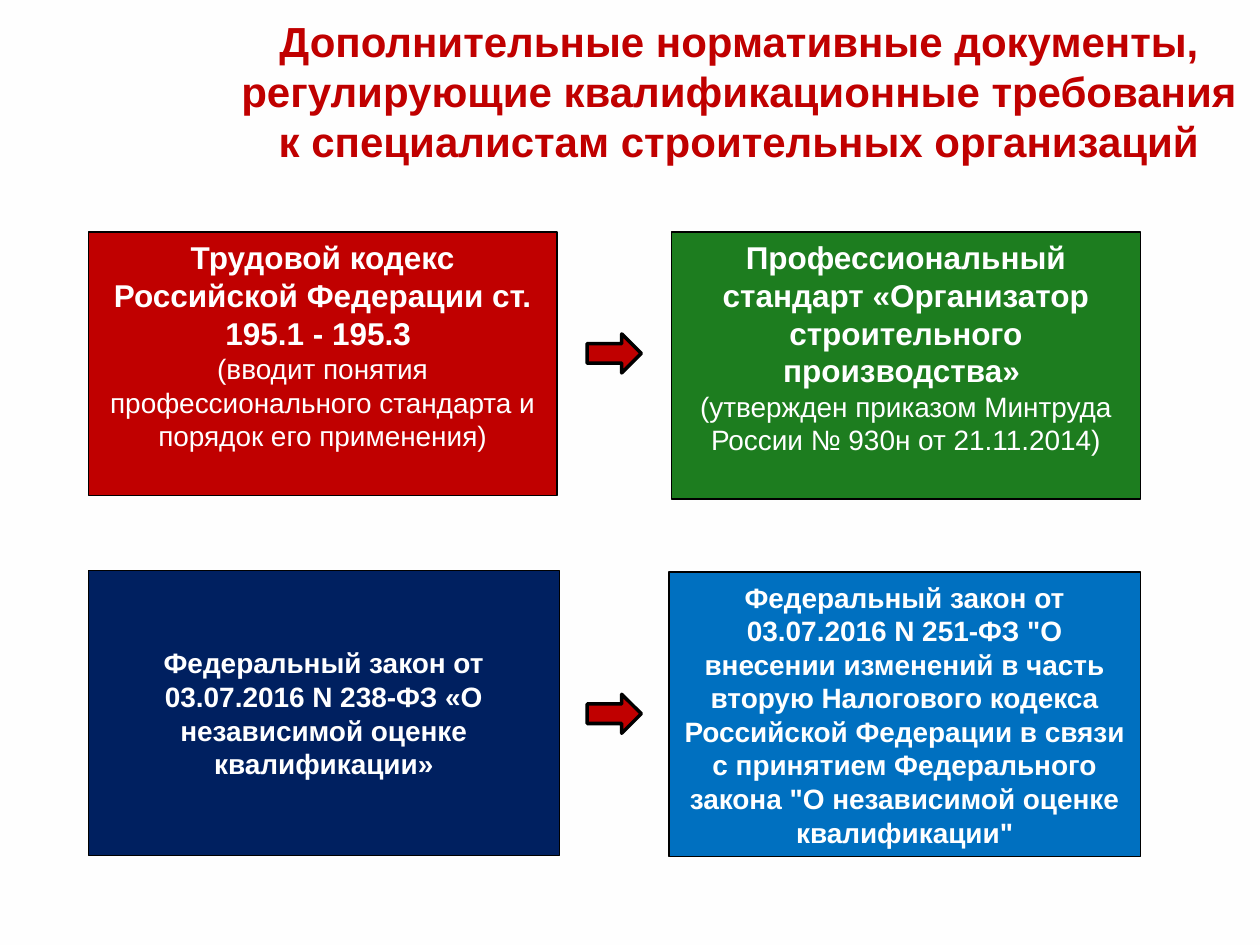
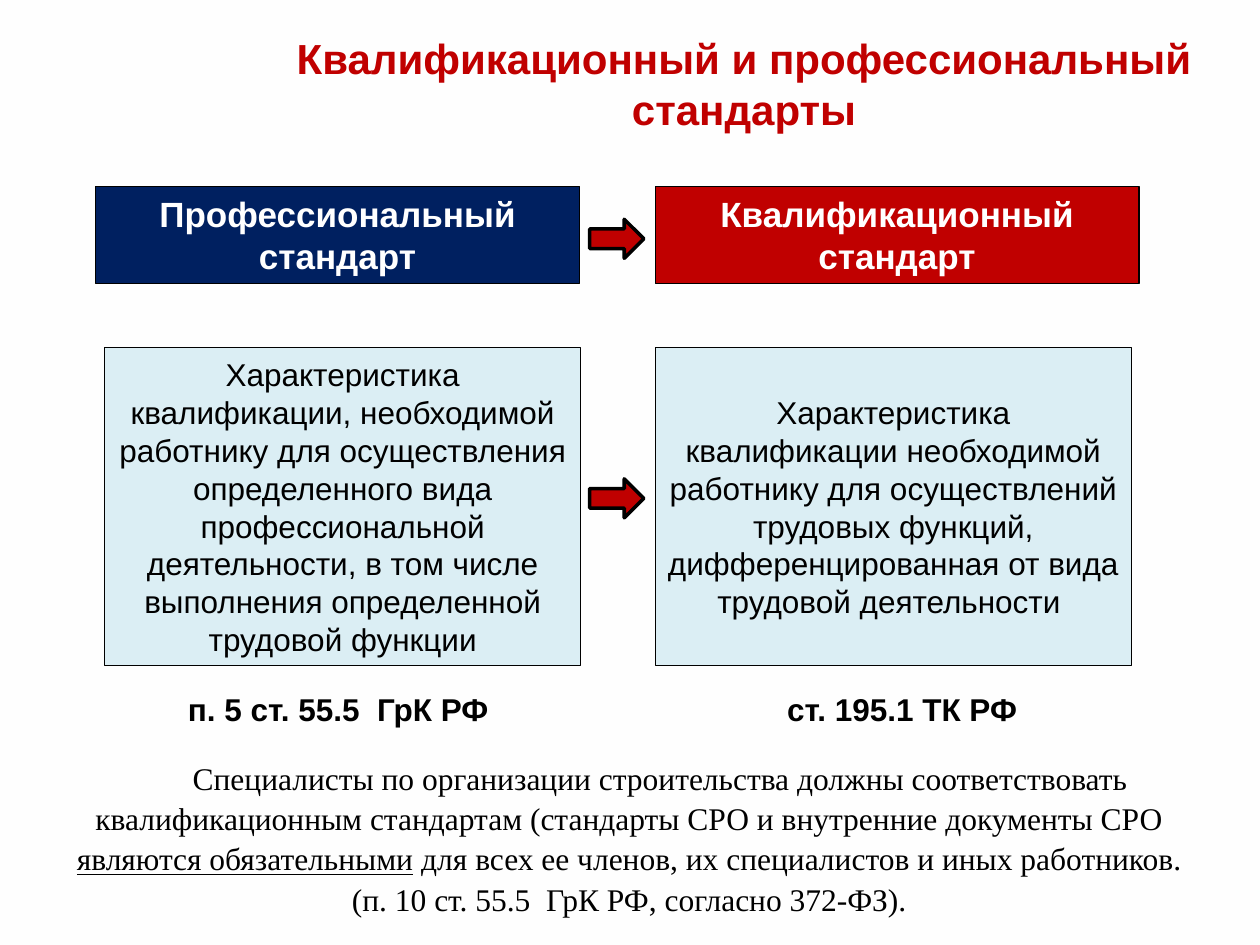
from dataclasses import dataclass

import pptx
import pptx.dml.color
import pptx.enum.shapes
import pptx.enum.text
import pptx.oxml.ns
import pptx.presentation
import pptx.shapes.autoshape
import pptx.slide
import pptx.text.text
import pptx.util

Inches = pptx.util.Inches
Anchor = pptx.enum.text.MSO_ANCHOR
Geometry = pptx.enum.shapes.MSO_SHAPE

COLORS = {
    "background": "FEFEFE",
    "red": "C00000",
    "navy": "002060",
    "green": "1D7D1F",
    "blue": "0070C0",
    "pale": "DBEEF4",
    "white": "FFFFFF",
    "black": "000000",
}
SANS = "Arial"
SERIF = "Times New Roman"
TITLE_WIDTH = 8.27
ARROW_WIDTH, ARROW_HEIGHT = 0.43, 0.31


@dataclass
class Line:
    text: str
    size: int
    bold: bool = True


@dataclass
class Panel:
    left: float
    top: float
    width: float
    height: float
    fill: str
    lines: list[Line]
    text_color: str = "white"
    anchor: Anchor = Anchor.MIDDLE


@dataclass
class Caption:
    left: float
    width: float
    text: str


def rgb(name: str) -> pptx.dml.color.RGBColor:
    return pptx.dml.color.RGBColor.from_string(COLORS[name])


def format_paragraph(paragraph: pptx.text.text._Paragraph, size: int, color: str,
                     bold: bool = True, font_name: str = SANS) -> None:
    paragraph.alignment = pptx.enum.text.PP_ALIGN.CENTER
    font = paragraph.font
    font.name = font_name
    font.size = pptx.util.Pt(size)
    font.bold = bold
    font.color.rgb = rgb(color)


def add_titled_slide(presentation: pptx.presentation.Presentation, text: str,
                     left: float, top: float, height: float) -> pptx.slide.Slide:
    slide = presentation.slides.add_slide(presentation.slide_layouts[5])
    slide.background.fill.solid()
    slide.background.fill.fore_color.rgb = rgb("background")
    title = slide.shapes.title
    title.left, title.top = Inches(left), Inches(top)
    title.width, title.height = Inches(TITLE_WIDTH), Inches(height)
    frame = title.text_frame
    frame.text = text
    frame.auto_size = pptx.enum.text.MSO_AUTO_SIZE.NONE
    frame.vertical_anchor = Anchor.TOP
    format_paragraph(frame.paragraphs[0], 24, "red")
    return slide


def add_block(slide: pptx.slide.Slide, geometry: Geometry, left: float, top: float,
              width: float, height: float, fill: str,
              line_width: float) -> pptx.shapes.autoshape.Shape:
    shape = slide.shapes.add_shape(
        geometry, Inches(left), Inches(top), Inches(width), Inches(height))
    shape.shadow.inherit = False
    shape.fill.solid()
    shape.fill.fore_color.rgb = rgb(fill)
    shape.line.color.rgb = rgb("black")
    shape.line.width = pptx.util.Pt(line_width)
    return shape


def add_panel(slide: pptx.slide.Slide, panel: Panel) -> None:
    shape = add_block(slide, Geometry.RECTANGLE, panel.left, panel.top,
                      panel.width, panel.height, panel.fill, 0.75)
    frame = shape.text_frame
    frame.word_wrap = True
    frame.vertical_anchor = panel.anchor
    for index, line in enumerate(panel.lines):
        paragraph = frame.add_paragraph() if index else frame.paragraphs[0]
        paragraph.text = line.text
        format_paragraph(paragraph, line.size, panel.text_color, line.bold)


def add_arrow(slide: pptx.slide.Slide, left: float, top: float) -> None:
    add_block(slide, Geometry.RIGHT_ARROW, left, top, ARROW_WIDTH, ARROW_HEIGHT, "red", 2)


def add_text_box(slide: pptx.slide.Slide, left: float, top: float, width: float,
                 height: float) -> pptx.text.text._Paragraph:
    box = slide.shapes.add_textbox(Inches(left), Inches(top), Inches(width), Inches(height))
    box.text_frame.word_wrap = True
    paragraph = box.text_frame.paragraphs[0]
    paragraph.line_spacing = 1.07
    return paragraph


def build_documents_slide(presentation: pptx.presentation.Presentation) -> None:
    slide = add_titled_slide(
        presentation,
        "Дополнительные нормативные документы, регулирующие квалификационные "
        "требования к специалистам строительных организаций", 1.73, 0.07, 1.31)
    panels = [
        Panel(0.7, 1.84, 3.72, 2.09, "red", [
            Line("Трудовой кодекс Российской Федерации ст. 195.1 - 195.3 ", 18),
            Line("(вводит понятия профессионального стандарта и порядок "
                 "его применения)", 16, False),
        ], anchor=Anchor.TOP),
        Panel(5.33, 1.84, 3.72, 2.12, "green", [
            Line("Профессиональный стандарт «Организатор строительного производства» ", 18),
            Line("(утвержден приказом Минтруда России № 930н от 21.11.2014)", 16, False),
        ], anchor=Anchor.TOP),
        Panel(0.7, 4.53, 3.74, 2.26, "navy", [
            Line("Федеральный закон от 03.07.2016 N 238-ФЗ «О независимой "
                 "оценке квалификации»", 16),
        ]),
        Panel(5.31, 4.54, 3.74, 2.26, "blue", [
            Line('Федеральный закон от 03.07.2016 N 251-ФЗ "О внесении изменений в часть '
                 'вторую Налогового кодекса Российской Федерации в связи с принятием '
                 'Федерального закона "О независимой оценке квалификации"', 16),
        ]),
    ]
    for panel in panels:
        add_panel(slide, panel)
    for top in (2.65, 5.51):
        add_arrow(slide, 4.66, top)


def build_standards_slide(presentation: pptx.presentation.Presentation) -> None:
    slide = add_titled_slide(
        presentation, "Квалификационный и профессиональный стандарты", 1.77, 0.21, 0.91)
    headings = [
        (0.76, "navy", "Профессиональный стандарт"),
        (5.2, "red", "Квалификационный стандарт"),
    ]
    for left, fill, text in headings:
        add_panel(slide, Panel(left, 1.48, 3.84, 0.77, fill, [Line(text, 20)]))
    definitions = [
        (0.83, "Характеристика квалификации, необходимой работнику для осуществления "
               "определенного вида профессиональной деятельности, в том числе выполнения "
               "определенной трудовой функции"),
        (5.2, "Характеристика квалификации необходимой работнику для осуществлений "
              "трудовых функций, дифференцированная от вида трудовой деятельности "),
    ]
    for left, text in definitions:
        add_panel(slide, Panel(left, 2.76, 3.78, 2.52, "pale",
                               [Line(text, 18, False)], "black"))
    for top in (1.74, 3.8):
        add_arrow(slide, 4.68, top)

    captions = [
        Caption(1.38, 2.61, "п. 5 ст. 55.5  ГрК РФ"),
        Caption(4.66, 5, "ст. 195.1 ТК РФ"),
    ]
    for caption in captions:
        paragraph = add_text_box(slide, caption.left, 5.41, caption.width, 0.4)
        paragraph.text = caption.text
        format_paragraph(paragraph, 18, "black")

    conclusion = add_text_box(slide, 0.37, 5.95, 9.25, 1.38)
    conclusion._p.get_or_add_pPr().set("indent", str(Inches(0.49)))
    conclusion_parts = [
        ("Специалисты по организации строительства должны соответствовать "
         "квалификационным стандартам (стандарты СРО и внутренние документы СРО ", False),
        ("являются обязательными", True),
        (" для всех ее членов, их специалистов и иных работников. "
         "(п. 10 ст. 55.5  ГрК РФ, согласно 372-ФЗ).", False),
    ]
    for text, underlined in conclusion_parts:
        run = conclusion.add_run()
        run.text = text
        if underlined:
            run.font.underline = True
    format_paragraph(conclusion, 18, "black", False, SERIF)


def main() -> None:
    presentation = pptx.Presentation()
    presentation.slide_width = Inches(10)
    presentation.slide_height = Inches(7.5)
    build_documents_slide(presentation)
    build_standards_slide(presentation)
    presentation.save("out.pptx")


if __name__ == "__main__":
    main()
